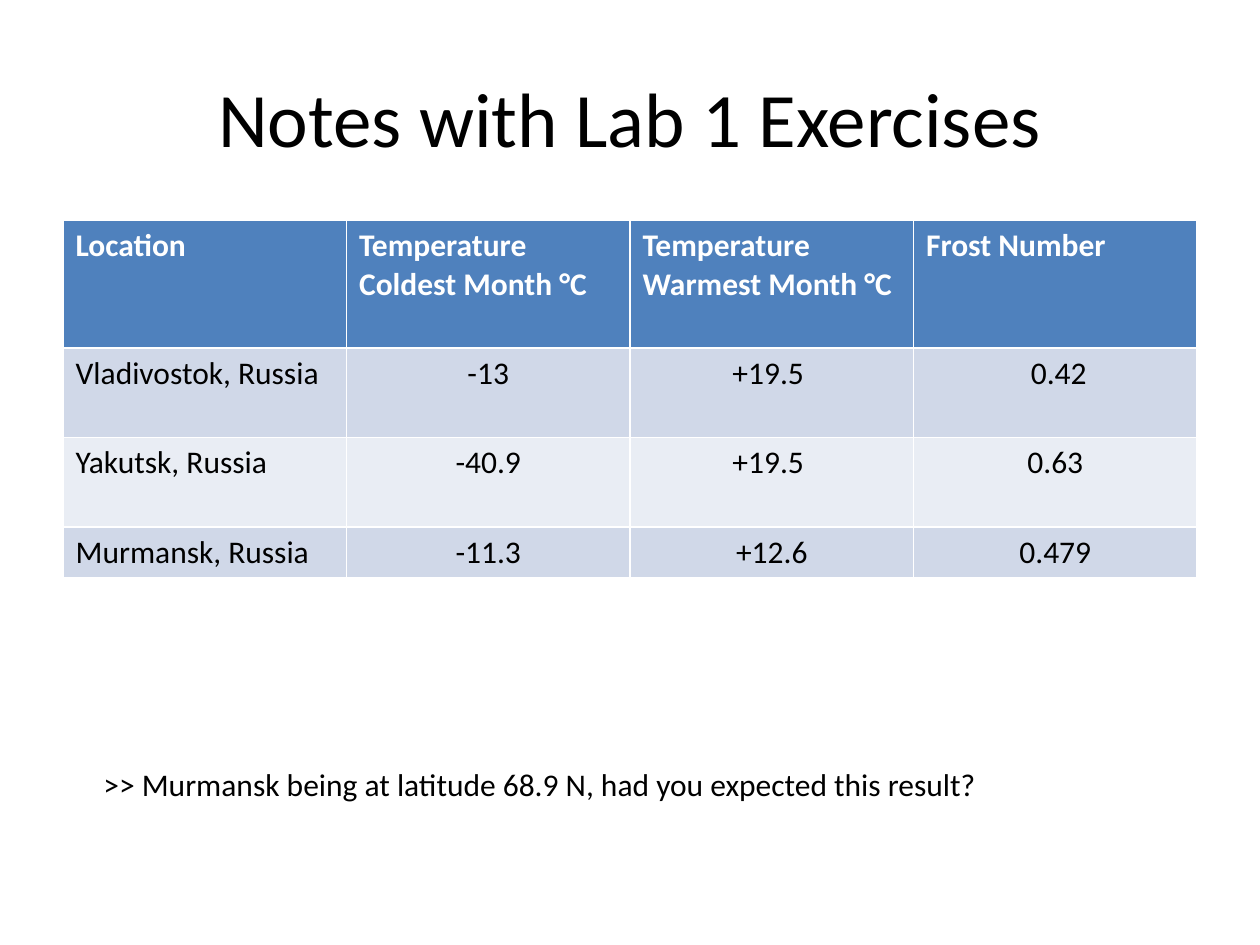
from pptx import Presentation
from pptx.dml.color import RGBColor
from pptx.enum.text import MSO_ANCHOR, PP_ALIGN
from pptx.util import Pt

LEFT, CENTER = PP_ALIGN.LEFT, PP_ALIGN.CENTER
TOP, MIDDLE = MSO_ANCHOR.TOP, MSO_ANCHOR.MIDDLE
FONT = "Calibri"
BLACK, WHITE, BLUE = "000000", "FFFFFF", "4F81BD"
BANDS = ["D0D8E8", "E9EDF4"]


def color(code):
    return RGBColor.from_string(code)


class Deck:
    def __init__(self, slide):
        self.slide = slide

    def style(self, frame, size, ink, align, bold=False):
        for para in frame.paragraphs:
            para.alignment = align
            for run in para.runs:
                font = run.font
                font.name, font.size, font.bold = FONT, Pt(size), bold
                font.color.rgb = color(ink)

    def text(self, words, x, y, w, h, size, align=LEFT, anchor=TOP, wrap=True):
        box = self.slide.shapes.add_textbox(Pt(x), Pt(y), Pt(w), Pt(h))
        frame = box.text_frame
        frame.word_wrap = wrap
        frame.vertical_anchor = anchor
        frame.text = words
        self.style(frame, size, BLACK, align)

    def table(self, rows, x, y, w, heights, size):
        # The default table style supplies the white cell borders
        shape = self.slide.shapes.add_table(
            len(rows), len(rows[0]), Pt(x), Pt(y), Pt(w), Pt(sum(heights)))
        grid = shape.table
        for r, row in enumerate(rows):
            grid.rows[r].height = Pt(heights[r])
            head = r == 0
            for c, words in enumerate(row):
                cell = grid.cell(r, c)
                cell.fill.solid()
                cell.fill.fore_color.rgb = color(BLUE if head else BANDS[(r - 1) % 2])
                cell.text_frame.text = words
                align = LEFT if head or c == 0 else CENTER
                self.style(cell.text_frame, size, WHITE if head else BLACK, align, head)


def main():
    prs = Presentation()
    prs.slide_width, prs.slide_height = Pt(720), Pt(540)
    deck = Deck(prs.slides.add_slide(prs.slide_layouts[6]))

    # Title
    deck.text("Notes with Lab 1 Exercises", 36, 21.6, 648, 90, 44, CENTER, MIDDLE)

    # Frost numbers by place
    rows = [
        ["Location", "Temperature\nColdest Month °C",
         "Temperature\nWarmest Month °C", "Frost Number"],
        ["Vladivostok, Russia", "-13", "+19.5 ", " 0.42"],
        ["Yakutsk, Russia", "-40.9", "+19.5 ", "0.63"],
        ["Murmansk, Russia", "-11.3", "+12.6", "0.479"],
    ]
    deck.table(rows, 36, 126, 648, [72.8, 51.2, 51.2, 29.2], 18)

    # Closing question
    deck.text(">> Murmansk being at latitude 68.9 N, had you expected this result?",
              52, 433.4, 515.5, 29, 18, wrap=False)

    prs.save("out.pptx")


if __name__ == "__main__":
    main()
